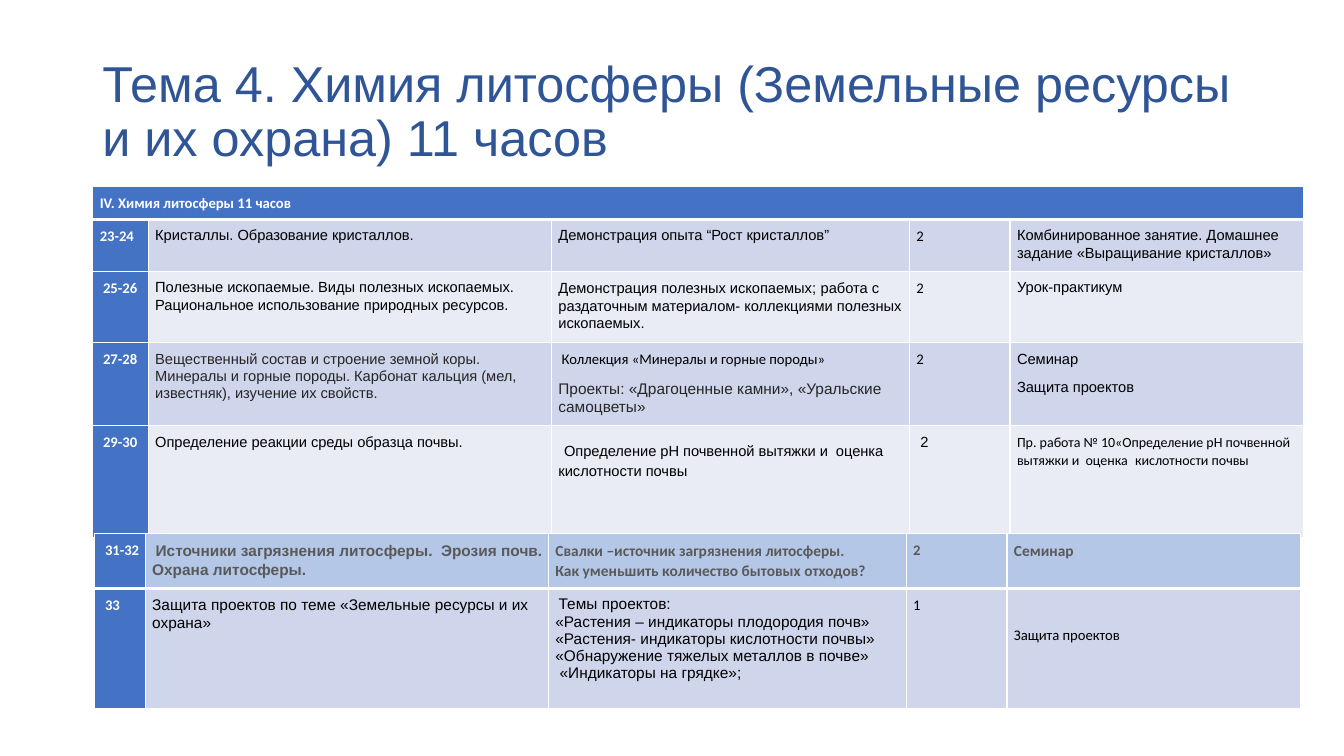
from dataclasses import dataclass
from typing import NamedTuple

from lxml.etree import SubElement
from pptx import Presentation
from pptx.dml.color import RGBColor as Rgb
from pptx.enum.text import MSO_ANCHOR as Anchor
from pptx.oxml.ns import qn
from pptx.util import Pt


class Style(NamedTuple):
    font: str
    size: float
    color: str
    bold: bool = False


@dataclass(frozen=True)
class Theme:
    accent: str = "4472C4"
    dark_band: str = "CFD5EA"
    light_band: str = "E9EBF5"
    highlight: str = "B4C7E7"
    grid: str = "FFFFFF"
    title: Style = Style("Arial", 36, "2F5597")
    number: Style = Style("Calibri", 10.5, "FFFFFF", True)
    body: Style = Style("Arial", 10.5, "000000")
    large: Style = Style("Arial", 11, "000000")
    soft: Style = Style("Arial", 10.5, "262626")
    soft_large: Style = Style("Arial", 11, "262626")
    plain: Style = Style("Calibri", 10.5, "000000")
    small: Style = Style("Calibri", 10, "000000")
    tall: Style = Style("Calibri", 18, "000000", True)
    gray_arial: Style = Style("Arial", 11, "595959", True)
    gray: Style = Style("Calibri", 11, "595959", True)
    gray_small: Style = Style("Calibri", 10.5, "595959", True)


THEME = Theme()
INSET = 5
LINE_BREAK = "\n"


class Run(NamedTuple):
    text: str
    style: Style = THEME.body


@dataclass(frozen=True)
class Paragraph:
    runs: tuple[Run, ...]
    line_spacing: float = 1.07
    space_after: float = 7.5


@dataclass(frozen=True)
class Cell:
    paragraphs: tuple[Paragraph, ...]
    top_inset: float = INSET


@dataclass(frozen=True)
class Row:
    height: float
    band: str
    cells: tuple[Cell, ...]
    bottom_line: float = 1


@dataclass(frozen=True)
class Schedule:
    left: float
    top: float
    number_width: float
    rows: tuple[Row, ...]


def line(text: str, style: Style = THEME.body) -> Paragraph:
    return Paragraph((Run(text, style),))


def cell(text: str, style: Style = THEME.body, top_inset: float = INSET) -> Cell:
    return Cell((line(text, style),), top_inset)


def tight(*runs: Run) -> Paragraph:
    return Paragraph(runs, 1, 0)


def mixed(*runs: Run) -> Cell:
    return Cell((Paragraph(runs),))


TOPIC_WIDTHS = (288, 255.6, 72, 209.5)

LESSONS = Schedule(66.3, 133.4, 39.6, (
    Row(23.2, THEME.accent, (cell("IV. Химия литосферы 11 часов", THEME.number),), 3),
    Row(34.6, THEME.dark_band, (
        cell("23-24", THEME.number),
        cell("Кристаллы. Образование кристаллов."),
        cell("Демонстрация опыта “Рост кристаллов”"),
        cell("2", THEME.plain),
        cell("Комбинированное занятие. Домашнее задание «Выращивание кристаллов»"))),
    Row(48.6, THEME.light_band, (
        cell(" 25-26", THEME.number),
        cell("Полезные ископаемые. Виды полезных ископаемых. "
             "Рациональное использование природных ресурсов."),
        mixed(Run("Демонстрация полезных ископаемых;"), Run(" ", THEME.large),
              Run("работа с раздаточным материалом- коллекциями полезных ископаемых.")),
        cell("2", THEME.plain),
        cell("Урок-практикум"))),
    Row(57.5, THEME.dark_band, (
        cell(" 27-28", THEME.number),
        cell("Вещественный состав и строение земной коры. Минералы и горные породы. "
             "Карбонат кальция (мел, известняк), изучение их свойств.", THEME.soft),
        Cell((line(" Коллекция «Минералы и горные породы»", THEME.plain),
              line("Проекты: «Драгоценные камни», «Уральские самоцветы»", THEME.soft_large))),
        cell("2", THEME.plain),
        Cell((line("Семинар"), line("Защита проектов"))))),
    Row(80, THEME.light_band, (
        cell(" 29-30", THEME.number),
        cell("Определение реакции среды образца почвы."),
        Cell((tight(Run(" ", THEME.tall),
                    Run("Определение рН почвенной вытяжки и  оценка  кислотности почвы")),)),
        cell(" 2"),
        mixed(Run("Пр. работа № 10«Определение рН почвенной вытяжки и  оценка ", THEME.small),
              Run(" ", THEME.large), Run("кислотности почвы", THEME.small)))),
))

FINAL_LESSONS = Schedule(67.7, 380.9, 36, (
    Row(39.5, THEME.highlight, (
        cell(" 31-32", THEME.number),
        mixed(Run(" ", THEME.gray),
              Run("Источники загрязнения литосферы.  Эрозия почв. Охрана литосферы.",
                  THEME.gray_arial)),
        mixed(Run("Свалки –источник загрязнения литосферы.", THEME.gray), Run(LINE_BREAK),
              Run("Как уменьшить количество бытовых отходов?", THEME.gray)),
        cell("2", THEME.gray_small),
        cell("Семинар", THEME.gray)), 3),
    Row(85.5, THEME.dark_band, (
        cell(" 33", THEME.number),
        cell("Защита проектов по теме «Земельные ресурсы и их охрана»", THEME.large),
        Cell((tight(Run(" ", THEME.plain), Run("Темы проектов:", THEME.large)),
              *(tight(Run(project, THEME.large)) for project in (
                  "«Растения – индикаторы плодородия почв»",
                  "«Растения- индикаторы кислотности почвы»",
                  "«Обнаружение тяжелых металлов в почве»",
                  " «Индикаторы на грядке»;")))),
        cell("1", THEME.plain),
        cell("Защита проектов", THEME.plain, top_inset=26))),
))


def write_paragraphs(frame, paragraphs: tuple[Paragraph, ...]) -> None:
    for index, content in enumerate(paragraphs):
        target = frame.add_paragraph() if index else frame.paragraphs[0]
        target.line_spacing = content.line_spacing
        target.space_after = Pt(content.space_after)
        for text, style in content.runs:
            if text == LINE_BREAK:
                target.add_line_break()
                continue
            run = target.add_run()
            run.text = text
            run.font.name = style.font
            run.font.size = Pt(style.size)
            run.font.bold = style.bold
            run.font.color.rgb = Rgb.from_string(style.color)


def set_borders(table_cell, bottom_line: float) -> None:
    """Add the four edges; they must precede the fill in the cell's XML."""
    properties = table_cell._tc.get_or_add_tcPr()
    for edge, width in (("L", 1), ("R", 1), ("T", 1), ("B", bottom_line)):
        border = SubElement(properties, qn(f"a:ln{edge}"), w=str(Pt(width)))
        fill = SubElement(border, qn("a:solidFill"))
        SubElement(fill, qn("a:srgbClr"), val=THEME.grid)


def draw_schedule(slide, schedule: Schedule) -> None:
    widths = (schedule.number_width, *TOPIC_WIDTHS)
    height = sum(row.height for row in schedule.rows)
    table = slide.shapes.add_table(
        len(schedule.rows), len(widths), Pt(schedule.left), Pt(schedule.top),
        Pt(sum(widths)), Pt(height)).table
    table.first_row = table.horz_banding = False
    for column, width in zip(table.columns, widths):
        column.width = Pt(width)
    for row_index, row in enumerate(schedule.rows):
        table.rows[row_index].height = Pt(row.height)
        for column_index in range(len(widths)):
            target = table.cell(row_index, column_index)
            set_borders(target, row.bottom_line)
            target.fill.solid()
            target.fill.fore_color.rgb = Rgb.from_string(
                row.band if column_index else THEME.accent)
        for column_index, content in enumerate(row.cells):
            target = table.cell(row_index, column_index)
            target.margin_left = target.margin_bottom = Pt(INSET)
            target.margin_top = Pt(content.top_inset)
            target.margin_right = Pt(INSET if column_index == len(row.cells) - 1 else 0)
            write_paragraphs(target.text_frame, content.paragraphs)
        if len(row.cells) == 1:
            table.cell(row_index, 0).merge(table.cell(row_index, len(widths) - 1))


def draw_title(slide, text: str) -> None:
    frame = slide.shapes.add_textbox(Pt(66), Pt(28.8), Pt(828), Pt(104.4)).text_frame
    frame.word_wrap = True
    frame.vertical_anchor = Anchor.MIDDLE
    write_paragraphs(frame, (Paragraph((Run(text, THEME.title),), 0.9, 0),))


def main() -> None:
    deck = Presentation()
    deck.slide_width, deck.slide_height = Pt(960), Pt(540)
    slide = deck.slides.add_slide(deck.slide_layouts[6])
    draw_title(slide, "Тема 4. Химия литосферы (Земельные ресурсы и их охрана) 11 часов")
    for schedule in (LESSONS, FINAL_LESSONS):
        draw_schedule(slide, schedule)
    deck.save("out.pptx")


if __name__ == "__main__":
    main()
